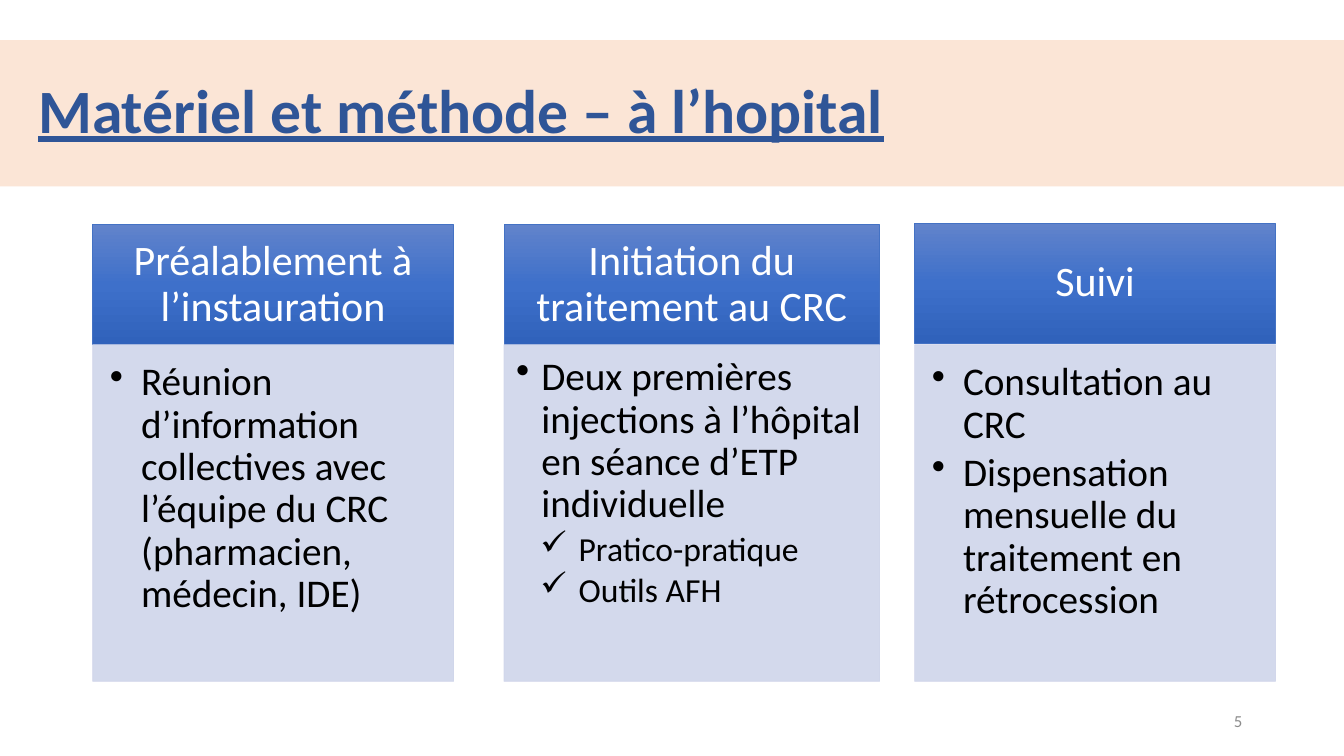
from copy import deepcopy

from lxml import etree
from pptx import Presentation
from pptx.dml.color import RGBColor
from pptx.enum.shapes import MSO_SHAPE
from pptx.enum.text import MSO_ANCHOR, PP_ALIGN
from pptx.oxml.ns import qn
from pptx.util import Inches, Pt

RECTANGLE = MSO_SHAPE.RECTANGLE
TOP, MIDDLE = MSO_ANCHOR.TOP, MSO_ANCHOR.MIDDLE
LEFT, CENTER, RIGHT = PP_ALIGN.LEFT, PP_ALIGN.CENTER, PP_ALIGN.RIGHT

FONT = "Calibri"
COLORS = {
    "band": "FBE5D6",
    "title": "2F5597",
    "header_top": "6183CB",
    "header_middle": "3E70CA",
    "header_bottom": "3062BB",
    "header_line": "4472C4",
    "header_text": "FFFFFF",
    "body": "CFD5EA",
    "body_text": "000000",
    "number": "8C8C8C",
}

# Shares of the slide, in percent of its width or height
HEADER_HEIGHT = 15.87
BODY_TOP, BODY_HEIGHT = 45.6, 44.53
BODY_OPACITY = 90

# Insets in inches: left, top, right, bottom
HEADER_INSETS = (0.23, 0.13, 0.23, 0.13)
WIDE_INSETS = (0.17, 0.17, 0.23, 0.26)
NARROW_INSETS = (0.12, 0.12, 0.16, 0.17)

# Bullet levels: mark, text size, left margin and hanging indent in inches
WIDE_ITEM = dict(level=1, bullet="•", size=28, margin=0.31, hanging=0.31)
NARROW_ITEM = dict(level=1, bullet="•", size=28, margin=0.25, hanging=0.25)
CHECK_ITEM = dict(level=2, bullet="✓", size=24, margin=0.62, hanging=0.38)

COLUMNS = [
    dict(left=6.9, width=26.85, header_top=29.73, insets=WIDE_INSETS,
         header="Préalablement à l’instauration",
         items=[("Réunion d’information collectives avec l’équipe du CRC "
                 "(pharmacien, médecin, IDE)", WIDE_ITEM)]),
    dict(left=37.5, width=27.95, header_top=29.73, insets=NARROW_INSETS,
         header="Initiation du traitement au CRC",
         items=[("Deux premières injections à l’hôpital en séance d’ETP "
                 "individuelle", NARROW_ITEM),
                ("Pratico-pratique", CHECK_ITEM),
                ("Outils AFH", CHECK_ITEM)]),
    dict(left=68.05, width=26.85, header_top=29.5, insets=WIDE_INSETS,
         header="Suivi",
         items=[("Consultation au CRC", WIDE_ITEM),
                ("Dispensation mensuelle du traitement en rétrocession",
                 WIDE_ITEM)]),
]


def rgb(name):
    return RGBColor.from_string(COLORS[name])


def add_text(frame, text, *, size, color, align=LEFT, bold=False,
             underline=False, line_spacing=0.9, level=0, bullet=None,
             margin=0, hanging=0):
    """Write one paragraph, reusing the empty first one of the frame."""
    first = frame.paragraphs[0]
    paragraph = frame.add_paragraph() if first.runs else first
    paragraph.alignment = align
    paragraph.level = level
    paragraph.line_spacing = line_spacing
    run = paragraph.add_run()
    run.text = text
    run.font.name, run.font.size = FONT, Pt(size)
    run.font.bold, run.font.underline = bold, underline
    run.font.color.rgb = rgb(color)
    if bullet:
        paragraph.space_after = Pt(round(size * 0.15, 1))
        properties = paragraph._p.get_or_add_pPr()
        properties.set("marL", str(Inches(margin)))
        properties.set("indent", str(-Inches(hanging)))
        etree.SubElement(properties, qn("a:buChar"), char=bullet)


class SlideBuilder:
    """Holds the presentation, its current slide and the shared style."""

    def __init__(self):
        self.presentation = Presentation()
        self.presentation.slide_width = Inches(13.33)
        self.presentation.slide_height = Inches(7.5)
        blank = self.presentation.slide_layouts[6]
        self.slide = self.presentation.slides.add_slide(blank)

    def place(self, left, top, width, height):
        across = self.presentation.slide_width / 100
        down = self.presentation.slide_height / 100
        return [round(length) for length in
                (left * across, top * down, width * across, height * down)]

    def frame(self, shape, insets, anchor):
        frame = shape.text_frame
        frame.word_wrap = True
        frame.vertical_anchor = anchor
        (frame.margin_left, frame.margin_top,
         frame.margin_right, frame.margin_bottom) = map(Inches, insets)
        return frame

    def box(self, *area, fill=None, line=None):
        shape = self.slide.shapes.add_shape(RECTANGLE, *self.place(*area))
        shape.shadow.inherit = False
        if fill:
            shape.fill.solid()
            shape.fill.fore_color.rgb = rgb(fill)
        if line:
            shape.line.color.rgb = rgb(line)
            shape.line.width = Pt(0.5)
        else:
            shape.line.fill.background()
        return shape

    def title(self, text):
        shape = self.box(0, 5.33, 100, 19.33, fill="band")
        frame = self.frame(shape, (0.38, 0.05, 0.1, 0.05), MIDDLE)
        add_text(frame, text, size=44, color="title", bold=True,
                 underline=True)

    def header(self, left, top, width, text):
        shape = self.box(left, top, width, HEADER_HEIGHT, line="header_line")
        shape.fill.gradient()
        shape.fill.gradient_angle = 270
        # A new gradient has two stops; a third is needed
        stop_list = shape._element.spPr.find(".//" + qn("a:gsLst"))
        stop_list.append(deepcopy(stop_list[0]))
        names = ("header_top", "header_middle", "header_bottom")
        for index, stop in enumerate(shape.fill.gradient_stops):
            stop.position = index / 2
            stop.color.rgb = rgb(names[index])
        frame = self.frame(shape, HEADER_INSETS, MIDDLE)
        add_text(frame, text, size=30, color="header_text", align=CENTER)

    def body(self, left, width, insets, items):
        shape = self.box(left, BODY_TOP, width, BODY_HEIGHT,
                         fill="body", line="body")
        for color in shape._element.spPr.iter(qn("a:srgbClr")):
            etree.SubElement(color, qn("a:alpha"),
                             val=str(BODY_OPACITY * 1000))
        frame = self.frame(shape, insets, TOP)
        for text, style in items:
            add_text(frame, text, color="body_text", **style)

    def page_number(self, text):
        area = self.place(70.67, 92.67, 22.5, 5.33)
        shape = self.slide.shapes.add_textbox(*area)
        frame = self.frame(shape, (0.1, 0.05, 0.1, 0.05), MIDDLE)
        add_text(frame, text, size=12, color="number", align=RIGHT,
                 line_spacing=1.0)


def main():
    builder = SlideBuilder()

    # Three columns, each a header over a list
    for column in COLUMNS:
        builder.header(column["left"], column["header_top"],
                       column["width"], column["header"])
        builder.body(column["left"], column["width"],
                     column["insets"], column["items"])

    # Title band and page number
    builder.title("Matériel et méthode – à l’hopital")
    builder.page_number("5")

    builder.presentation.save("out.pptx")


if __name__ == "__main__":
    main()
